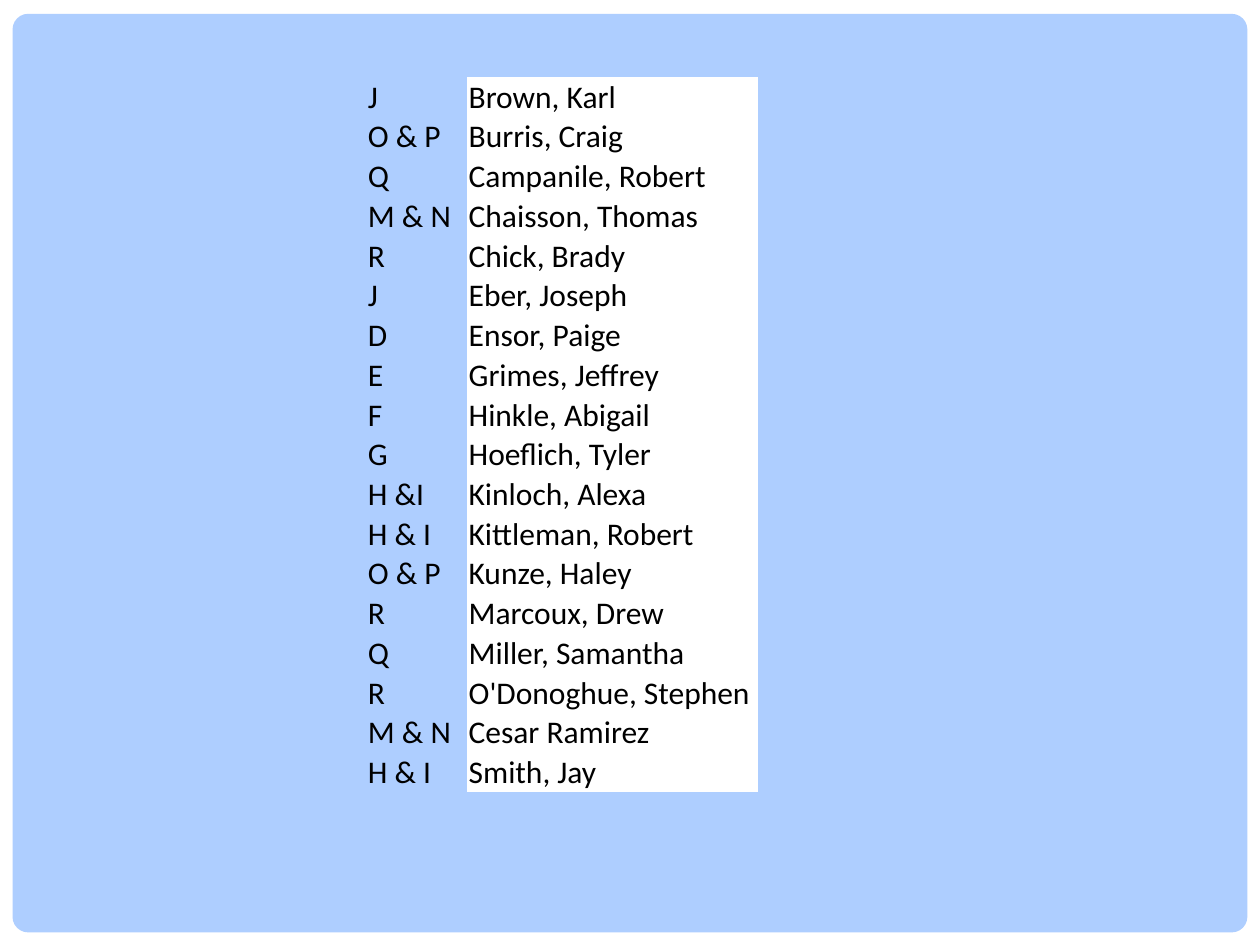
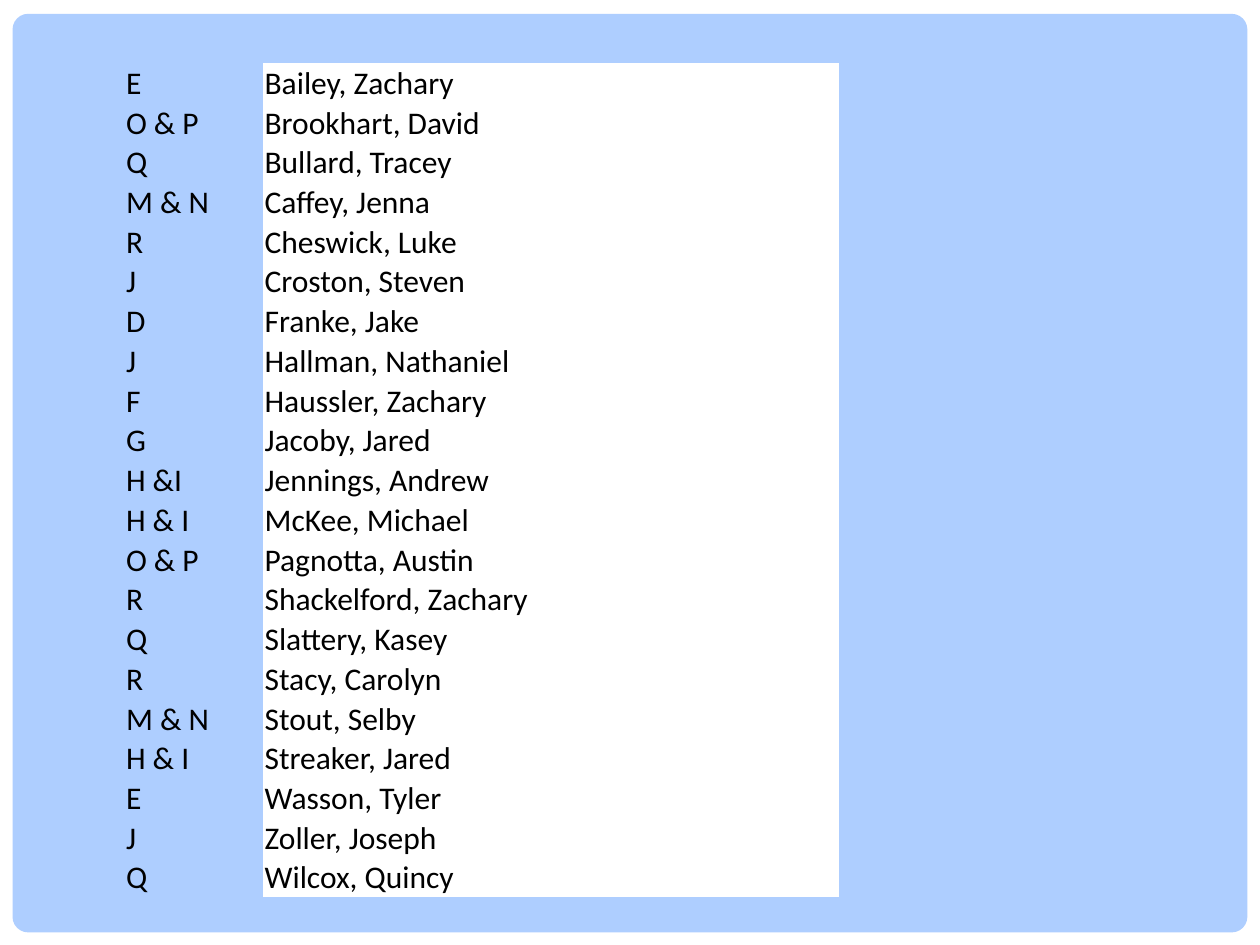
from dataclasses import dataclass

from pptx import Presentation
from pptx.dml.color import RGBColor
from pptx.enum import shapes, text
from pptx.util import Inches, Pt


@dataclass(frozen=True)
class Theme:
    paper: RGBColor = RGBColor(0xFF, 0xFF, 0xFF)
    panel: RGBColor = RGBColor(0xAE, 0xCE, 0xFF)
    ink: RGBColor = RGBColor(0, 0, 0)
    font: str = "Calibri"
    size: Pt = Pt(18)
    no_grid_style: str = "{2D5ABB26-0587-4C30-8999-92F81FD0307C}"


theme = Theme()
ROW_HEIGHT = Inches(0.31)
CELL_INSET = Inches(0.01)

# Each roster: left, top, column widths, (section, student) rows
rosters = [
    (2.91, 0.61, (0.8, 2.31), [
        ("J", "Brown, Karl"),
        ("O & P", "Burris, Craig"),
        ("Q", "Campanile, Robert"),
        ("M & N", "Chaisson, Thomas"),
        ("R", "Chick, Brady"),
        ("J", "Eber, Joseph"),
        ("D", "Ensor, Paige"),
        ("E", "Grimes, Jeffrey"),
        ("F", "Hinkle, Abigail"),
        ("G", "Hoeflich, Tyler"),
        ("H &I", "Kinloch, Alexa"),
        ("H & I", "Kittleman, Robert"),
        ("O & P", "Kunze, Haley"),
        ("R", "Marcoux, Drew"),
        ("Q", "Miller, Samantha"),
        ("R", "O'Donoghue, Stephen"),
        ("M & N", "Cesar Ramirez"),
        ("H & I", "Smith, Jay"),
    ]),
    (0.99, 0.5, (1.1, 4.57), [
        ("E", "Bailey, Zachary"),
        ("O & P", "Brookhart, David"),
        ("Q", "Bullard, Tracey"),
        ("M & N", "Caffey, Jenna"),
        ("R", "Cheswick, Luke"),
        ("J", "Croston, Steven"),
        ("D", "Franke, Jake"),
        ("J", "Hallman, Nathaniel"),
        ("F", "Haussler, Zachary"),
        ("G", "Jacoby, Jared"),
        ("H &I", "Jennings, Andrew"),
        ("H & I", "McKee, Michael"),
        ("O & P", "Pagnotta, Austin"),
        ("R", "Shackelford, Zachary"),
        ("Q", "Slattery, Kasey"),
        ("R", "Stacy, Carolyn"),
        ("M & N", "Stout, Selby"),
        ("H & I", "Streaker, Jared"),
        ("E", "Wasson, Tyler"),
        ("J", "Zoller, Joseph"),
        ("Q", "Wilcox, Quincy"),
    ]),
]

deck = Presentation()
deck.slide_width, deck.slide_height = Inches(10), Inches(7.5)
master = deck.slide_master
master.background.fill.solid()
master.background.fill.fore_color.rgb = theme.panel
blank = deck.slide_layouts.get_by_name("Blank")
pages = [deck.slides.add_slide(blank) for roster in rosters]

# Shared backdrop: drawn on a page, then moved behind the master's placeholders
backdrop = [
    (shapes.MSO_SHAPE.RECTANGLE, (0, 0, 10, 7.5), theme.paper),
    (shapes.MSO_SHAPE.ROUNDED_RECTANGLE, (0.1, 0.11, 9.8, 7.29), theme.panel),
]
for layer, (kind, frame, color) in enumerate(backdrop):
    shape = pages[0].shapes.add_shape(kind, *map(Inches, frame))
    shape.shadow.inherit = False
    shape.fill.solid()
    shape.fill.fore_color.rgb = color
    shape.line.fill.background()
    if kind == shapes.MSO_SHAPE.ROUNDED_RECTANGLE:
        shape.adjustments[0] = 0.017
    master.shapes.element.insert(2 + layer, shape.element)

for page, (left, top, widths, students) in zip(pages, rosters):
    frame = page.shapes.add_table(
        len(students), len(widths), Inches(left), Inches(top),
        Inches(sum(widths)), ROW_HEIGHT * len(students))
    table = frame.table
    table.first_row = table.horz_banding = False
    frame.element.find(".//{*}tableStyleId").text = theme.no_grid_style
    for column, width in zip(table.columns, widths):
        column.width = Inches(width)

    for row, student in zip(table.rows, students):
        row.height = ROW_HEIGHT
        for cell, words in zip(row.cells, student):
            cell.text = words
            cell.vertical_anchor = text.MSO_ANCHOR.BOTTOM
            cell.margin_left = cell.margin_right = cell.margin_top = CELL_INSET
            cell.margin_bottom = 0
            font = cell.text_frame.paragraphs[0].font
            font.name, font.size = theme.font, theme.size
            font.color.rgb = theme.ink
        section_cell, name_cell = row.cells
        section_cell.fill.background()
        name_cell.fill.solid()
        name_cell.fill.fore_color.rgb = theme.paper

deck.save("out.pptx")
